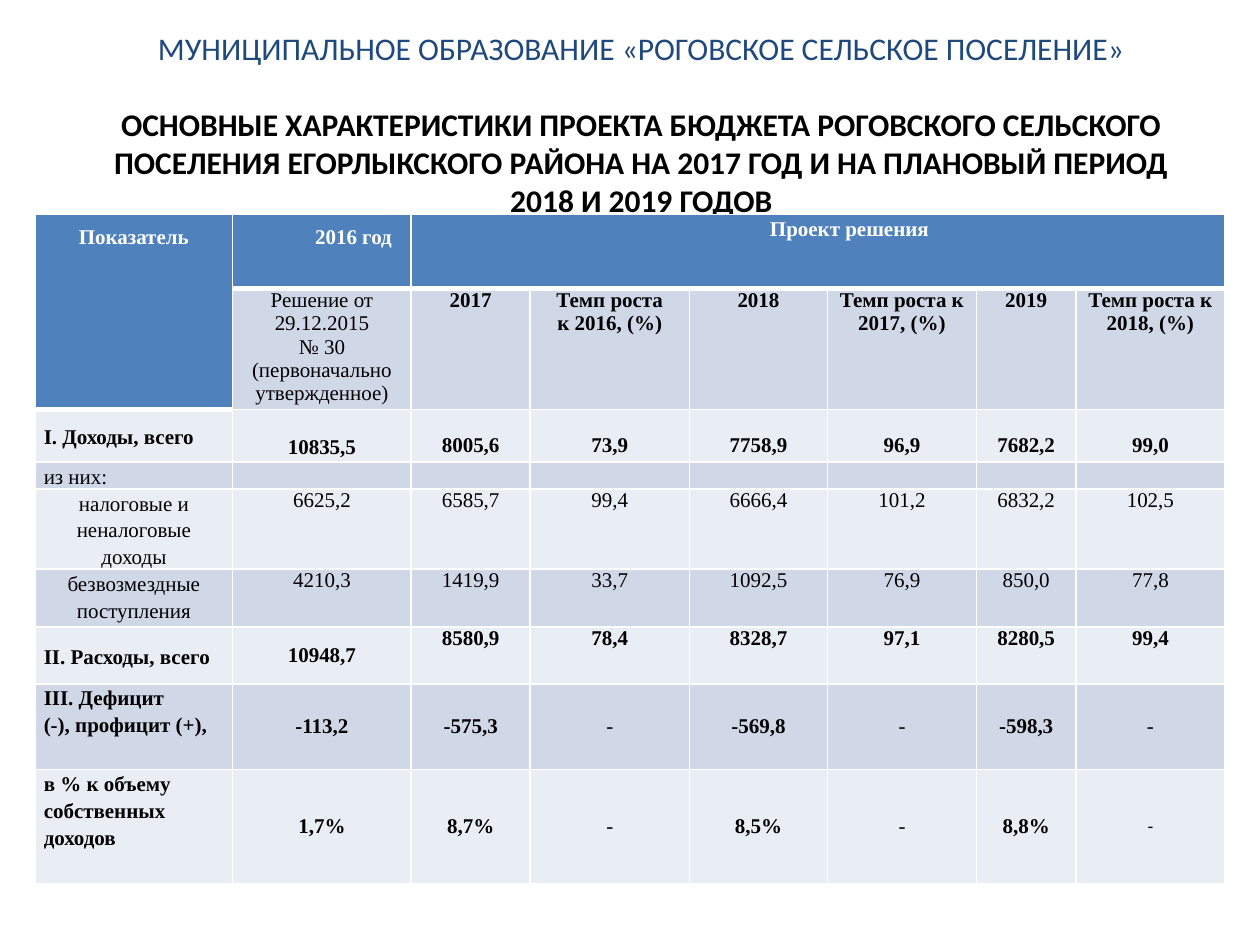
from lxml.etree import SubElement
from pptx import Presentation
from pptx.dml.color import RGBColor
from pptx.enum.text import MSO_ANCHOR as Anchor, MSO_AUTO_SIZE as AutoSize, PP_ALIGN as Align
from pptx.oxml.ns import qn
from pptx.util import Pt

# Content
MUNICIPALITY = "МУНИЦИПАЛЬНОЕ ОБРАЗОВАНИЕ «РОГОВСКОЕ СЕЛЬСКОЕ ПОСЕЛЕНИЕ»"
HEADING = [
    "ОСНОВНЫЕ ХАРАКТЕРИСТИКИ ПРОЕКТА БЮДЖЕТА РОГОВСКОГО СЕЛЬСКОГО "
    "ПОСЕЛЕНИЯ ЕГОРЛЫКСКОГО РАЙОНА НА 2017 ГОД И НА ПЛАНОВЫЙ ПЕРИОД",
    "2018 И 2019 ГОДОВ",
]
# text, column, first-line indent, line spacing
HEADER = [("Показатель", 0, -5, 1.5), ("2016 год", 1, 36, 1.5), ("Проект решения", 2, 36, 1.15)]
SUBHEADER = [
    ["Решение от 29.12.2015", "№ 30", "(первоначально утвержденное)"],
    ["2017"], ["Темп роста", "к 2016, (%)"],
    ["2018"], ["Темп роста к 2017, (%)"],
    ["2019"], ["Темп роста к 2018, (%)"],
]
TOP, MID, BOTTOM = Anchor.TOP, Anchor.MIDDLE, Anchor.BOTTOM
LEFT, CENTER = Align.LEFT, Align.CENTER
# label lines, label alignment, bold, anchors (label, 2016, others), top inset of values, values
BUDGET = [
    (["I. Доходы, всего"], LEFT, True, (MID, MID, TOP), 13.8,
     ["10835,5", "8005,6", "73,9", "7758,9", "96,9", "7682,2", "99,0"]),
    (["из них:"], LEFT, False, (MID, TOP, TOP), 0, [""] * 7),
    (["налоговые и неналоговые доходы"], CENTER, False, (BOTTOM, TOP, TOP), 0,
     ["6625,2", "6585,7", "99,4", "6666,4", "101,2", "6832,2", "102,5"]),
    (["безвозмездные поступления"], CENTER, False, (TOP, TOP, TOP), 0,
     ["4210,3", "1419,9", "33,7", "1092,5", "76,9", "850,0", "77,8"]),
    (["II. Расходы, всего"], LEFT, True, (MID, MID, TOP), 0,
     ["10948,7", "8580,9", "78,4", "8328,7", "97,1", "8280,5", "99,4"]),
    (["III. Дефицит", "(-), профицит (+),"], LEFT, True, (TOP, MID, MID), 0,
     ["-113,2", "-575,3", "-", "-569,8", "-", "-598,3", "-"]),
    (["в % к объему собственных доходов"], LEFT, True, (TOP, MID, MID), 0,
     ["1,7%", "8,7%", "-", "8,5%", "-", "8,8%", "-"]),
]
COLUMN_WIDTHS = [113, 102, 68, 91, 79, 85, 57, 85]
ROW_HEIGHTS = [42.5, 69, 30, 15, 45, 33, 32.5, 49, 65]
HEADER_FILL, BANDS = "4F81BD", ("E9EDF4", "D0D8E8")
WHITE, BLACK, NAVY = "FFFFFF", "000000", "1F497D"


def color(value):
    return RGBColor.from_string(value)


def add_run(paragraph, text, size, face, ink, bold):
    run = paragraph.add_run()
    run.text = text
    font = run.font
    font.size, font.name, font.bold = Pt(size), face, bold
    font.color.rgb = color(ink)


def set_borders(cell, bottom=1):
    properties = cell._tc.get_or_add_tcPr()
    for side, width in (("L", 1), ("R", 1), ("T", 1), ("B", bottom)):
        line = SubElement(properties, qn(f"a:ln{side}"), w=str(Pt(width)))
        fill = SubElement(line, qn("a:solidFill"))
        SubElement(fill, qn("a:srgbClr"), val=WHITE)


def fill_cell(cell, lines, fill, bold=True, align=CENTER, anchor=TOP, spacing=1.0,
              inset=0, indent=0, ink=BLACK, size=12, face="Times New Roman"):
    cell.margin_left = cell.margin_right = Pt(5)
    cell.margin_top, cell.margin_bottom = Pt(inset), 0
    cell.vertical_anchor = anchor
    cell.fill.solid()
    cell.fill.fore_color.rgb = color(fill)
    for number, line in enumerate(lines):
        frame = cell.text_frame
        paragraph = frame.add_paragraph() if number else frame.paragraphs[0]
        paragraph.alignment, paragraph.line_spacing = align, spacing
        if indent:
            paragraph._p.get_or_add_pPr().set("indent", str(Pt(indent)))
        if line:
            add_run(paragraph, line, size, face, ink, bold)
        else:
            SubElement(paragraph._p, qn("a:endParaRPr"), sz=str(size * 100))


prs = Presentation()
prs.slide_width, prs.slide_height = Pt(720), Pt(540)
slide = prs.slides.add_slide(prs.slide_layouts[5])

# Title
title = slide.shapes.title
title.left, title.top, title.width, title.height = Pt(42.5), Pt(16.5), Pt(648), Pt(108)
frame = title.text_frame
frame.word_wrap, frame.auto_size = True, AutoSize.NONE
frame.vertical_anchor = TOP
frame.margin_top = frame.margin_bottom = 0
municipality, heading = frame.paragraphs[0], frame.add_paragraph()
municipality.alignment = heading.alignment = CENTER
add_run(municipality, MUNICIPALITY, 18, "Calibri", NAVY, False)
heading.space_before = Pt(22)
for number, line in enumerate(HEADING):
    if number:
        heading.add_line_break()
    add_run(heading, line, 18, "Calibri", BLACK, True)

# Table grid
table = slide.shapes.add_table(
    len(ROW_HEIGHTS), len(COLUMN_WIDTHS), Pt(20), Pt(122.5),
    Pt(sum(COLUMN_WIDTHS)), Pt(sum(ROW_HEIGHTS))).table
for column, width in zip(table.columns, COLUMN_WIDTHS):
    column.width = Pt(width)
for row, height in zip(table.rows, ROW_HEIGHTS):
    row.height = Pt(height)
for r in range(len(ROW_HEIGHTS)):
    for c in range(len(COLUMN_WIDTHS)):
        header_edge = r == 0 or (r, c) == (1, 0)
        set_borders(table.cell(r, c), bottom=3 if header_edge else 1)
table.cell(0, 0).merge(table.cell(1, 0))
table.cell(0, 2).merge(table.cell(0, 7))

# Header rows
for text, c, indent, spacing in HEADER:
    fill_cell(table.cell(0, c), [text], HEADER_FILL, indent=indent, spacing=spacing, ink=WHITE)
for c, lines in enumerate(SUBHEADER, 1):
    fill_cell(table.cell(1, c), lines, BANDS[1], bold=c > 1)

# Budget rows
for r, (label, align, bold, anchors, inset, values) in enumerate(BUDGET, 2):
    band = BANDS[r % 2]
    fill_cell(table.cell(r, 0), label, band, bold, align, anchors[0], 1.15)
    for c, value in enumerate(values, 1):
        last = (r, c) == (len(ROW_HEIGHTS) - 1, len(COLUMN_WIDTHS) - 1)
        size, face = (10, "Arial") if last else (12, "Times New Roman")
        fill_cell(table.cell(r, c), [value], band, bold and value != "-",
                  anchor=anchors[min(c, 2)], inset=inset, size=size, face=face)

prs.save("out.pptx")
